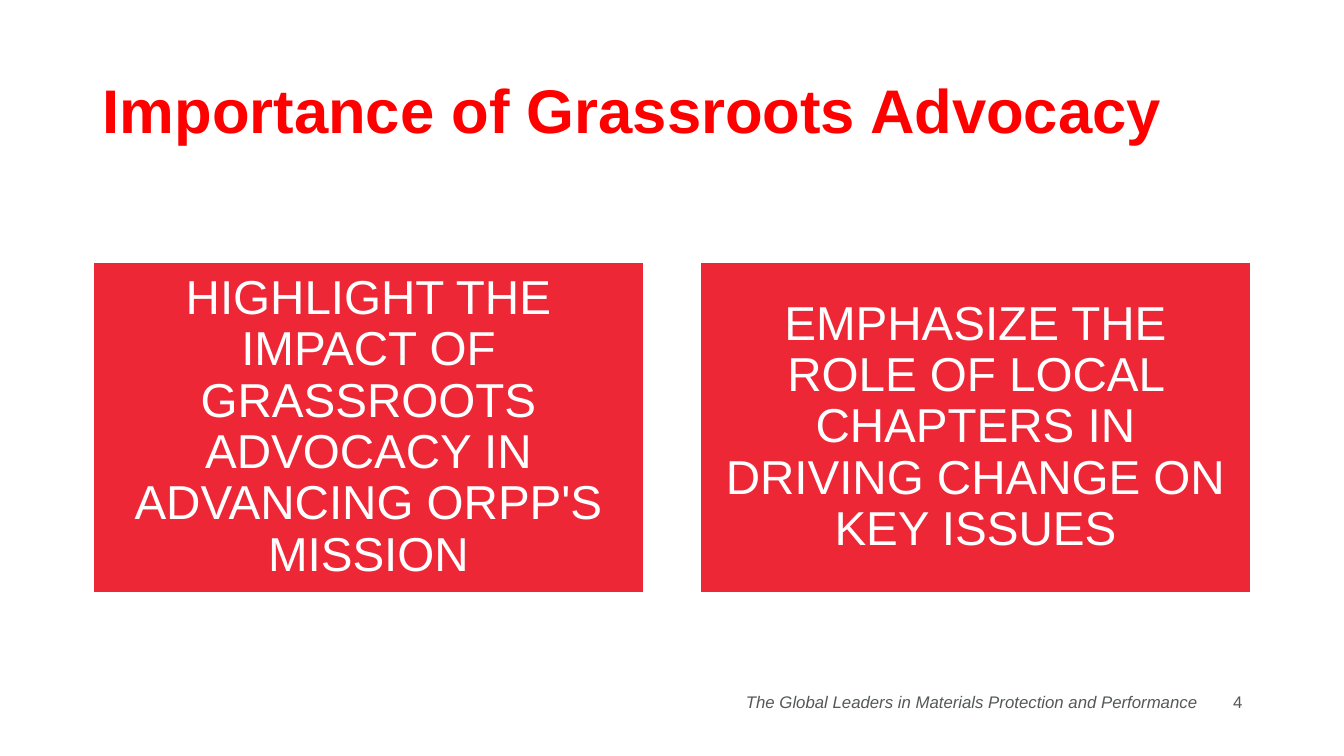
from dataclasses import dataclass

from pptx import Presentation
from pptx.dml.color import RGBColor
from pptx.enum.shapes import MSO_SHAPE
from pptx.enum.text import MSO_ANCHOR, PP_ALIGN
from pptx.util import Inches, Pt

TITLE = "Importance of Grassroots Advocacy"
CARDS = [
    "HIGHLIGHT THE IMPACT OF GRASSROOTS ADVOCACY IN ADVANCING ORPP'S MISSION",
    "EMPHASIZE THE ROLE OF LOCAL CHAPTERS IN DRIVING CHANGE ON KEY ISSUES",
]
TAGLINE = "The Global Leaders in Materials Protection and Performance"
PAGE_NUMBER = "4"


@dataclass(frozen=True)
class Theme:
    font: str = "Arial"
    title: str = "FF0000"
    card: str = "EE2737"
    white: str = "FFFFFF"
    footer: str = "545859"
    title_size: int = 44
    card_size: int = 34
    footer_size: int = 12


THEME = Theme()
LEFT, CARD_TOP, CARD_WIDTH, CARD_HEIGHT, CARD_GAP = 0.92, 2.6, 5.47, 3.28, 0.55
CARD_INSET = 0.14
FOOTER_TOP, FOOTER_HEIGHT = 6.76, 0.4


def write(shape, text, *, size, color, align=PP_ALIGN.LEFT, spacing=1.0,
          bold=False, italic=False):
    frame = shape.text_frame
    frame.word_wrap = True
    frame.vertical_anchor = MSO_ANCHOR.MIDDLE
    para = frame.paragraphs[0]
    para.alignment = align
    para.line_spacing = spacing
    span = para.add_run()
    span.text = text
    span.font.name = THEME.font
    span.font.size = Pt(size)
    span.font.bold = bold
    span.font.italic = italic
    span.font.color.rgb = RGBColor.from_string(color)


def add_text(page, text, left, top, width, height, **style):
    box = page.shapes.add_textbox(Inches(left), Inches(top), Inches(width), Inches(height))
    write(box, text, **style)


def add_card(page, text, left):
    card = page.shapes.add_shape(MSO_SHAPE.RECTANGLE, Inches(left), Inches(CARD_TOP),
                                 Inches(CARD_WIDTH), Inches(CARD_HEIGHT))
    card.shadow.inherit = False
    card.fill.solid()
    card.fill.fore_color.rgb = RGBColor.from_string(THEME.card)
    card.line.color.rgb = RGBColor.from_string(THEME.white)
    card.line.width = Pt(1.5)
    frame = card.text_frame
    frame.margin_left = frame.margin_right = Inches(CARD_INSET)
    frame.margin_top = frame.margin_bottom = Inches(CARD_INSET)
    write(card, text, size=THEME.card_size, color=THEME.white,
          align=PP_ALIGN.CENTER, spacing=0.9)


def main():
    deck = Presentation()
    deck.slide_width, deck.slide_height = Inches(13.33), Inches(7.5)
    page = deck.slides.add_slide(deck.slide_layouts[6])

    add_text(page, TITLE, LEFT, 0.4, 11.5, 1.45, size=THEME.title_size,
             color=THEME.title, spacing=0.9, bold=True)
    for index, text in enumerate(CARDS):
        add_card(page, text, LEFT + index * (CARD_WIDTH + CARD_GAP))

    footer = dict(size=THEME.footer_size, color=THEME.footer, align=PP_ALIGN.RIGHT)
    add_text(page, TAGLINE, 7.04, FOOTER_TOP, 4.94, FOOTER_HEIGHT, italic=True, **footer)
    add_text(page, PAGE_NUMBER, 11.94, FOOTER_TOP, 0.48, FOOTER_HEIGHT, **footer)
    deck.save("out.pptx")


if __name__ == "__main__":
    main()
